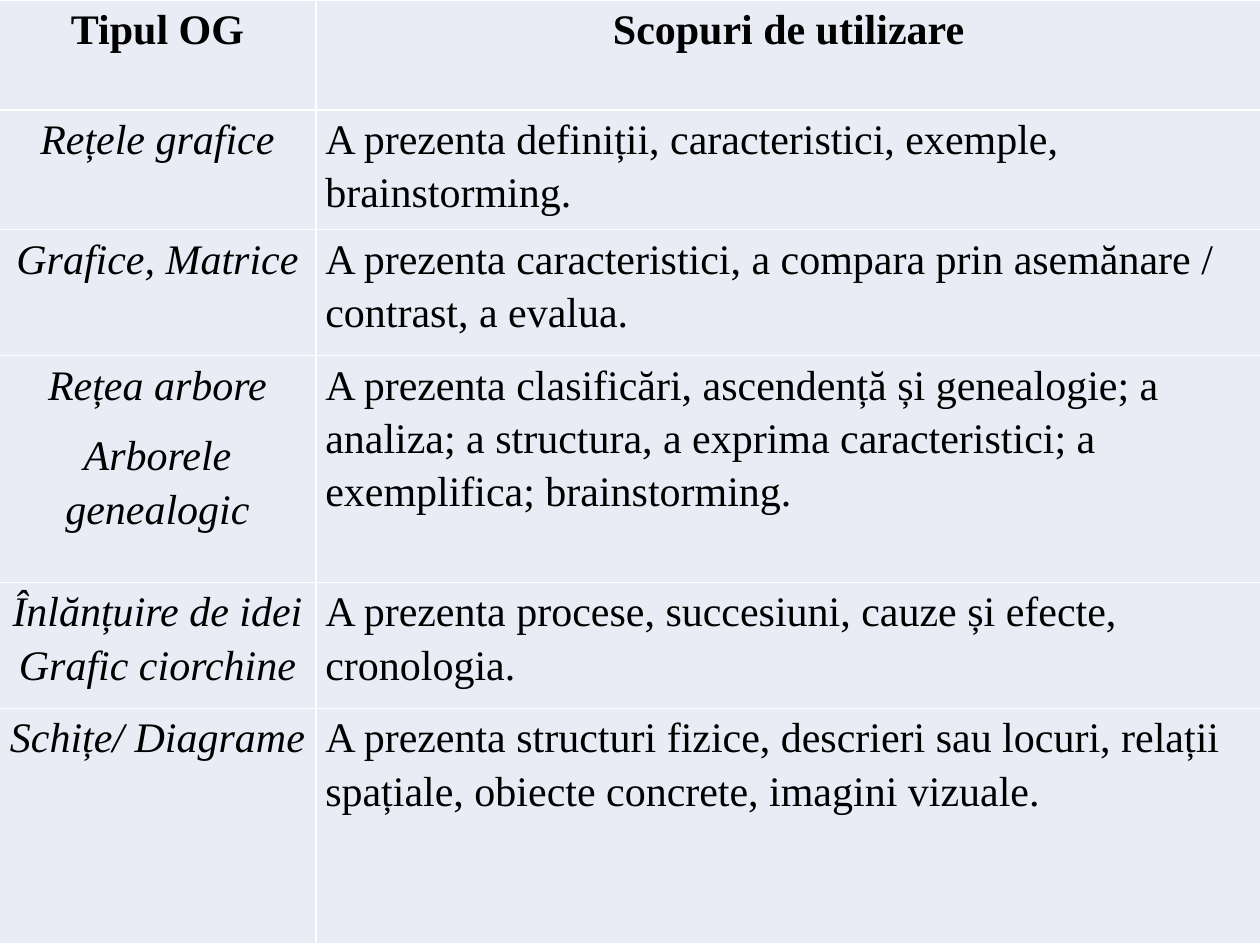
from lxml.etree import SubElement
from pptx import Presentation
from pptx.dml.color import RGBColor
from pptx.enum.text import PP_ALIGN
from pptx.oxml.ns import qn
from pptx.util import Pt

HUES = {"ink": "000000", "cell": "E9EBF5", "rule": "FFFFFF"}
COLS = [181.4, 540]
ROWS = [62.8, 68.5, 72, 129.6, 72, 134.6]
HEAD = ("Tipul OG", "Scopuri de utilizare")
BODY = [
    ("Rețele grafice",
     "A prezenta definiții, caracteristici, exemple, brainstorming."),
    ("Grafice, Matrice",
     "A prezenta caracteristici, a compara prin asemănare / contrast, a evalua."),
    ("Rețea arbore\nArborele genealogic",
     "A prezenta clasificări, ascendență și genealogie; a analiza; a structura, "
     "a exprima caracteristici; a exemplifica; brainstorming."),
    ("Înlănțuire de idei Grafic ciorchine",
     "A prezenta procese, succesiuni, cauze și efecte, cronologia."),
    ("Schițe/ Diagrame",
     "A prezenta structuri fizice, descrieri sau locuri, relații spațiale, "
     "obiecte concrete, imagini vizuale."),
]


class Deck:
    font = "Times New Roman"
    size = 24

    def __init__(self, slide):
        self.slide = slide

    def table(self, left, top, cols, rows, data):
        frame = self.slide.shapes.add_table(
            len(rows), len(cols), Pt(left), Pt(top), Pt(sum(cols)), Pt(sum(rows)))
        grid = frame.table
        grid.first_row = grid.horz_banding = False
        for col, width in zip(grid.columns, cols):
            col.width = Pt(width)
        for row, height in zip(grid.rows, rows):
            row.height = Pt(height)
        for r, line in enumerate(data):
            for c, text in enumerate(line):
                self.cell(grid.cell(r, c), text, r == 0, c == 0)

    def cell(self, cell, text, head, first):
        cell.margin_left = cell.margin_right = Pt(5.2)
        cell.margin_top = cell.margin_bottom = 0
        self.border(cell)
        cell.fill.solid()
        cell.fill.fore_color.rgb = RGBColor.from_string(HUES["cell"])
        cell.text_frame.text = text
        for para in cell.text_frame.paragraphs:
            para.alignment = PP_ALIGN.CENTER if head or first else PP_ALIGN.LEFT
            para.line_spacing = 1.15
            para.space_after = Pt(10)
            for run in para.runs:
                font = run.font
                font.name = self.font
                font.size = Pt(self.size)
                font.bold = head
                font.italic = first and not head
                font.color.rgb = RGBColor.from_string(HUES["ink"])

    def border(self, cell):
        props = cell._tc.get_or_add_tcPr()
        for side in "LRTB":
            line = SubElement(props, qn(f"a:ln{side}"), w=str(Pt(1)))
            fill = SubElement(line, qn("a:solidFill"))
            SubElement(fill, qn("a:srgbClr"), val=HUES["rule"])


def main():
    prs = Presentation()
    prs.slide_width, prs.slide_height = Pt(720), Pt(540)
    deck = Deck(prs.slides.add_slide(prs.slide_layouts[6]))
    deck.table(-0.7, 0, COLS, ROWS, [HEAD, *BODY])
    prs.save("out.pptx")


if __name__ == "__main__":
    main()
